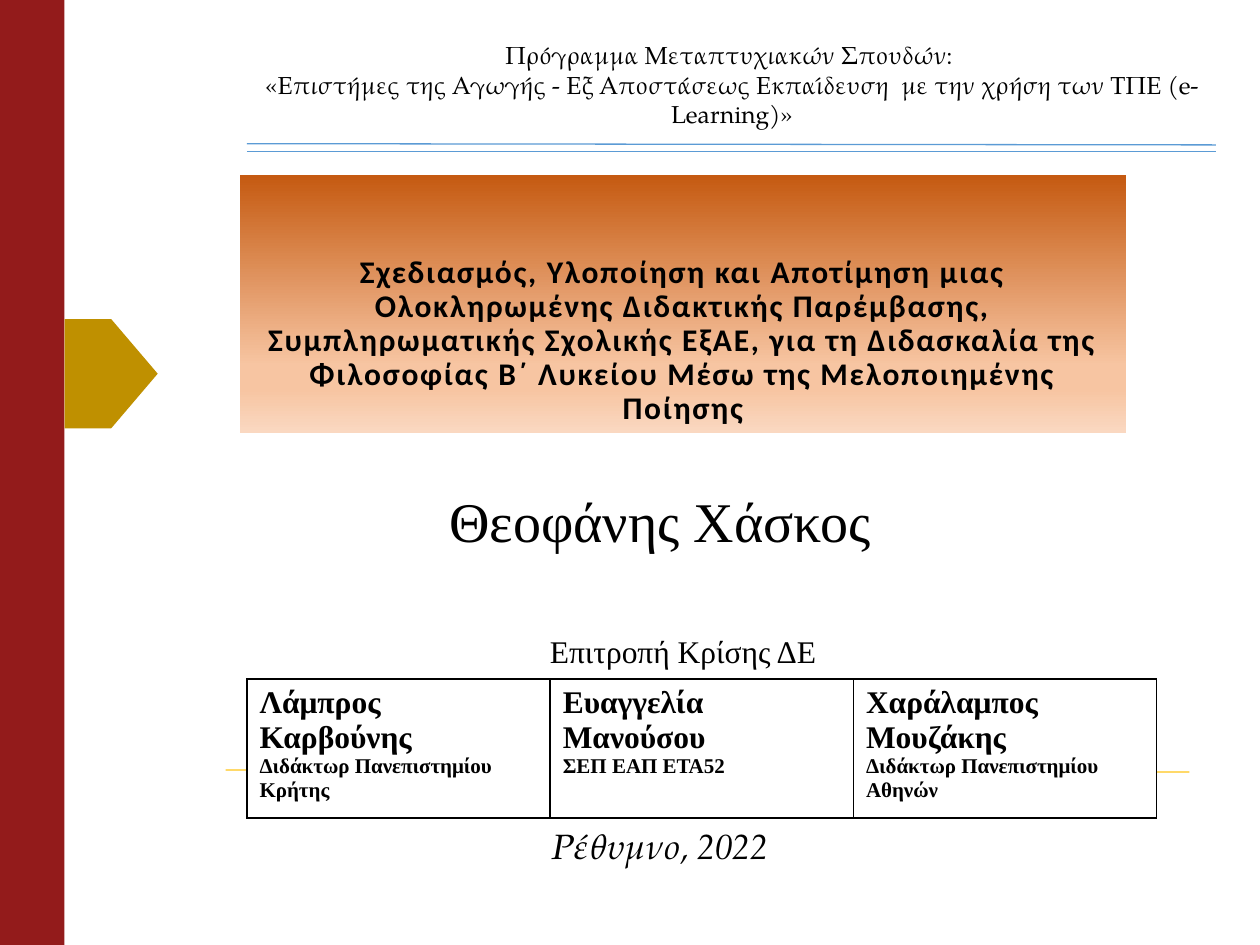
from lxml.etree import SubElement
from pptx import Presentation
from pptx.dml.color import RGBColor
from pptx.enum.shapes import MSO_CONNECTOR, MSO_SHAPE
from pptx.enum.text import MSO_ANCHOR, MSO_AUTO_SIZE, PP_ALIGN
from pptx.oxml.ns import qn
from pptx.util import Pt

COLORS = {"text": "000000", "paper": "FFFFFF", "band": "931B1B", "tag": "BF9000",
          "rule": "5B9BD5", "gold": "FFC61A"}
TITLE_STOPS = [(0, "C55A11"), (74, "F7C5A2"), (83, "F7C5A2"), (100, "FAD8C1")]
SERIF, PAGELLA, SANS = "Times New Roman", "TeX Gyre Pagella", "Calibri"


def rgb(name):
    return RGBColor.from_string(COLORS[name])


class CoverSlide:
    """Holds the slide and its style; all lengths are in points."""

    def __init__(self, slide):
        self.slide = slide
        self.shapes = slide.shapes

    def style(self, paragraph, size, font, bold=False, italic=False, align=PP_ALIGN.CENTER):
        paragraph.alignment = align
        paragraph.font.size = Pt(size)
        paragraph.font.name = font
        paragraph.font.bold = bold
        paragraph.font.italic = italic
        paragraph.font.color.rgb = rgb("text")

    def block(self, preset, box, color):
        block = self.shapes.add_shape(preset, *map(Pt, box))
        block.shadow.inherit = False
        block.fill.solid()
        block.fill.fore_color.rgb = rgb(color)
        block.line.fill.background()

    def title(self, text, box):
        title = self.shapes.title
        title.left, title.top, title.width, title.height = map(Pt, box)
        title.fill.gradient()
        title.fill.gradient_angle = 270
        stops = title.element.spPr.find(".//" + qn("a:gsLst"))
        for stop in list(stops):
            stops.remove(stop)
        for percent, color in TITLE_STOPS:
            stop = SubElement(stops, qn("a:gs"), pos=str(percent * 1000))
            SubElement(stop, qn("a:srgbClr"), val=color)
        frame = title.text_frame
        frame.text = text
        frame.word_wrap = True
        frame.auto_size = MSO_AUTO_SIZE.NONE
        frame.vertical_anchor = MSO_ANCHOR.BOTTOM
        paragraph = frame.paragraphs[0]
        self.style(paragraph, 18, SANS, bold=True)
        paragraph.line_spacing = 0.9
        paragraph.runs[0].font._element.set("spc", "100")

    def text(self, lines, box, size, font, italic=False, anchor=MSO_ANCHOR.TOP):
        frame = self.shapes.add_textbox(*map(Pt, box)).text_frame
        frame.word_wrap = True
        frame.auto_size = MSO_AUTO_SIZE.SHAPE_TO_FIT_TEXT
        frame.vertical_anchor = anchor
        frame.text = "\n".join(lines)
        for paragraph in frame.paragraphs:
            self.style(paragraph, size, font, italic=italic)

    def rule(self, start, end, color):
        rule = self.shapes.add_connector(MSO_CONNECTOR.STRAIGHT, *map(Pt, start + end))
        rule.line.color.rgb = rgb(color)
        rule.line.width = Pt(0.75)
        SubElement(rule._element.spPr, qn("a:effectLst"))

    def committee(self, members, box):
        table = self.shapes.add_table(1, len(members), *map(Pt, box)).table
        table.first_row = table.horz_banding = False
        for cell, member in zip(table.iter_cells(), members):
            cell.text = "\n".join(member)
            for paragraph, size in zip(cell.text_frame.paragraphs, (18, 12)):
                self.style(paragraph, size, SERIF, bold=True, align=PP_ALIGN.LEFT)
            self.border(cell)
            cell.fill.solid()
            cell.fill.fore_color.rgb = rgb("paper")

    def border(self, cell):
        properties = cell._tc.get_or_add_tcPr()
        for side in ("lnL", "lnR", "lnT", "lnB"):
            line = SubElement(properties, qn("a:" + side), w=str(Pt(1)))
            fill = SubElement(line, qn("a:solidFill"))
            SubElement(fill, qn("a:srgbClr"), val=COLORS["text"])


def main():
    deck = Presentation()
    deck.slide_width, deck.slide_height = Pt(720), Pt(540)
    cover = CoverSlide(deck.slides.add_slide(deck.slide_layouts[5]))

    cover.block(MSO_SHAPE.RECTANGLE, (0, 0, 36.9, 540), "band")
    cover.block(MSO_SHAPE.PENTAGON, (36.9, 182.3, 53.2, 62.5), "tag")
    cover.title("Σχεδιασμός, Υλοποίηση και Αποτίμηση μιας Ολοκληρωμένης Διδακτικής "
                "Παρέμβασης, Συμπληρωματικής Σχολικής ΕξΑΕ, για τη Διδασκαλία της "
                "Φιλοσοφίας Β΄ Λυκείου Μέσω της Μελοποιημένης Ποίησης",
                (137, 100, 506.4, 147.4))
    cover.text(["Πρόγραμμα Μεταπτυχιακών Σπουδών: ",
                "«Επιστήμες της Αγωγής - Εξ Αποστάσεως Εκπαίδευση  με την χρήση "
                "των ΤΠΕ (e-Learning)»"],
               (126.7, 19.4, 583.2, 41), 14, PAGELLA)
    cover.text(["Ρέθυμνο, 2022"], (93.6, 467.3, 567.4, 31.7), 20, PAGELLA,
               italic=True, anchor=MSO_ANCHOR.MIDDLE)
    cover.rule((141.1, 82.1), (694.8, 82.8), "rule")
    cover.rule((141.1, 86.4), (694.8, 86.4), "rule")
    cover.rule((128.9, 440), (679.7, 441.2), "gold")
    cover.text(["Θεοφάνης Χάσκος"], (108, 274.3, 538.6, 46), 32, SERIF)
    cover.committee([("Λάμπρος Καρβούνης", "Διδάκτωρ Πανεπιστημίου Κρήτης"),
                     ("Ευαγγελία Μανούσου", "ΣΕΠ ΕΑΠ ΕΤΑ52"),
                     ("Χαράλαμπος Μουζάκης", "Διδάκτωρ Πανεπιστημίου Αθηνών")],
                    (141.1, 388.1, 519.9, 79.2))
    cover.text(["Επιτροπή Κρίσης ΔΕ"], (121, 357.8, 538.6, 28.8), 18, SERIF)
    deck.save("out.pptx")


if __name__ == "__main__":
    main()
